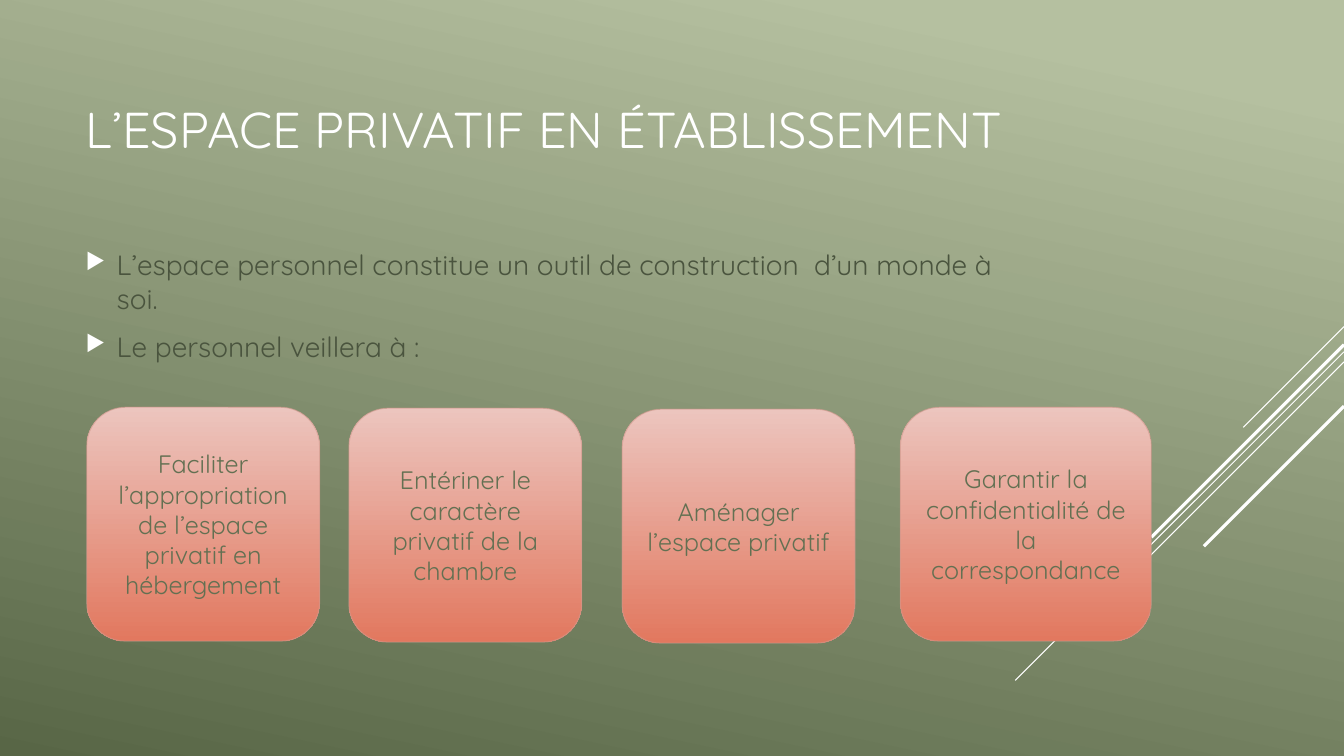
from dataclasses import dataclass

from lxml import etree
from pptx import Presentation
from pptx.dml.color import RGBColor
from pptx.enum.shapes import MSO_CONNECTOR, MSO_SHAPE
from pptx.enum.text import MSO_ANCHOR, PP_ALIGN
from pptx.oxml.ns import qn
from pptx.util import Inches, Pt

ROUNDED = MSO_SHAPE.ROUNDED_RECTANGLE
STRAIGHT = MSO_CONNECTOR.STRAIGHT
TOP, MIDDLE = MSO_ANCHOR.TOP, MSO_ANCHOR.MIDDLE
LEFT, CENTER = PP_ALIGN.LEFT, PP_ALIGN.CENTER


@dataclass(frozen=True)
class Theme:
    """Colours, font and type sizes of the deck."""
    font: str = "Quicksand"
    white: str = "FFFFFF"
    body: str = "4A543E"
    card_text: str = "637052"
    card_edge: str = "CF988C"
    card_fill: tuple = ((0, "ECC5BE"), (1, "E2785F"))
    backdrop: tuple = ((0.1, "B5C0A0"), (1, "586646"))
    title_size: int = 36
    body_size: int = 20
    card_size: int = 18
    thin: float = 0.75
    thick: float = 2.25


@dataclass(frozen=True)
class Box:
    """A rectangle in inches."""
    left: float
    top: float
    width: float
    height: float

    def emu(self):
        """Return the four lengths ready for a shape call."""
        return [Inches(n) for n in (self.left, self.top, self.width, self.height)]


THEME = Theme()
SLIDE = Box(0, 0, 13.33, 7.5)
TITLE = "L’ESPACE PRIVATIF EN ÉTABLISSEMENT"
POINTS = [
    "L’espace personnel constitue un outil de construction  d’un monde à soi.",
    "Le personnel veillera à :",
]
CARDS = [
    (0, 0, 2.31, "Faciliter l’appropriation de l’espace privatif en hébergement"),
    (2.6, 0.01, 2.31, "Entériner le caractère privatif de la chambre"),
    (5.31, 0.02, 2.31, "Aménager l’espace privatif"),
    (8.07, 0, 2.49, "Garantir la confidentialité de la correspondance"),
]
RAYS = [
    (0, 1, THEME.thin),
    (0.25, 3.26, THEME.thin),
    (0.35, 2.07, THEME.thin),
    (0.18, 1.91, THEME.thick),
    (0.79, 1.39, THEME.thick),
]


def paint_gradient(fill, stops, angle):
    """Fill with a two-stop gradient, its angle counted clockwise."""
    fill.gradient()
    fill.gradient_angle = 360 - angle
    for stop, (position, colour) in zip(fill.gradient_stops, stops):
        stop.position = position
        stop.color.rgb = RGBColor.from_string(colour)


def write(frame, lines, size, colour, anchor=MIDDLE, align=LEFT):
    """Put one paragraph per line in the frame and format it."""
    frame.word_wrap = True
    frame.vertical_anchor = anchor
    frame.text = "\n".join(lines)
    for para in frame.paragraphs:
        para.alignment = align
        for span in para.runs:
            span.font.name = THEME.font
            span.font.size = Pt(size)
            span.font.color.rgb = RGBColor.from_string(colour)


def add_bullet(para):
    """Give the paragraph a white triangle and a hanging indent."""
    para.space_before, para.space_after = Pt(4), Pt(6)
    props = para._p.get_or_add_pPr()
    props.set("marL", str(Inches(0.31)))
    props.set("indent", str(-Inches(0.31)))
    colour = etree.SubElement(props, qn("a:buClr"))
    etree.SubElement(colour, qn("a:srgbClr"), val=THEME.white)
    etree.SubElement(props, qn("a:buSzPct"), val="80000")
    etree.SubElement(props, qn("a:buChar"), char="▶")


def draw_rays(page, box):
    """Draw diagonals falling leftward at 45 degrees from the box's right edge."""
    right = box.left + box.width
    for drop, reach, weight in RAYS:
        start = box.top + drop
        ray = page.shapes.add_connector(
            STRAIGHT, Inches(right), Inches(start),
            Inches(right - reach), Inches(start + reach))
        ray.line.color.rgb = RGBColor.from_string(THEME.white)
        ray.line.width = Pt(weight)
        etree.SubElement(ray.element.spPr, qn("a:effectLst"))


def draw_title(page, box):
    """Place the slide title."""
    frame = page.shapes.add_textbox(*box.emu()).text_frame
    write(frame, [TITLE], THEME.title_size, THEME.white)


def draw_points(page, box):
    """Place the bulleted introduction."""
    frame = page.shapes.add_textbox(*box.emu()).text_frame
    write(frame, POINTS, THEME.body_size, THEME.body, TOP)
    for para in frame.paragraphs:
        add_bullet(para)


def draw_cards(page, box):
    """Place the row of rounded cards."""
    for shift, drop, width, label in CARDS:
        place = Box(box.left + shift, box.top + drop, width, box.height)
        card = page.shapes.add_shape(ROUNDED, *place.emu())
        card.shadow.inherit = False
        paint_gradient(card.fill, THEME.card_fill, 90)
        card.line.color.rgb = RGBColor.from_string(THEME.card_edge)
        card.line.width = Pt(THEME.thin)
        edge = card.element.xpath(".//a:ln//a:srgbClr")[0]
        etree.SubElement(edge, qn("a:alpha"), val="60000")
        write(card.text_frame, [label], THEME.card_size, THEME.card_text, align=CENTER)


def main():
    """Build and save the deck."""
    deck = Presentation()
    deck.slide_width, deck.slide_height = SLIDE.emu()[2:]
    page = deck.slides.add_slide(deck.slide_layouts[6])
    paint_gradient(page.background.fill, THEME.backdrop, 102)
    draw_rays(page, Box(10.07, 3.24, 3.26, 3.51))
    draw_points(page, Box(0.75, 2.41, 9.33, 1.4))
    draw_title(page, Box(0.75, 0.45, 9.33, 1.65))
    draw_cards(page, Box(0.86, 4.04, 10.56, 2.32))
    deck.save("out.pptx")


if __name__ == "__main__":
    main()
